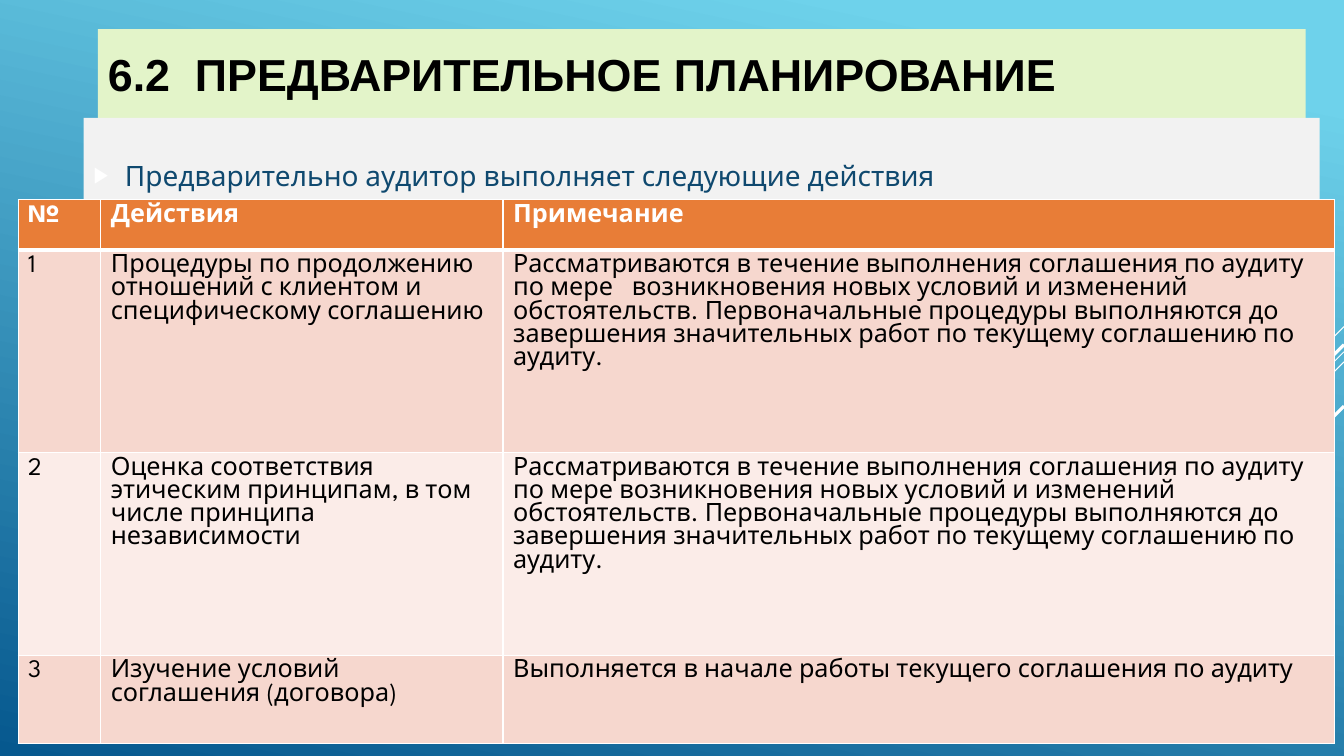
from lxml import etree
from pptx import Presentation
from pptx.dml.color import RGBColor
from pptx.enum.shapes import MSO_CONNECTOR as Connector, MSO_SHAPE as Shape
from pptx.enum.text import MSO_ANCHOR as Anchor, MSO_AUTO_SIZE as AutoSize, PP_ALIGN as Align
from pptx.oxml.ns import qn
from pptx.util import Inches, Pt

SKY = RGBColor(0x6E, 0xD2, 0xEB)
DEEP_BLUE = RGBColor(0x06, 0x58, 0x8E)
NAVY = RGBColor(0x0F, 0x49, 0x6F)
WHITE = RGBColor(0xFF, 0xFF, 0xFF)
BLACK = RGBColor(0x00, 0x00, 0x00)
PALE_GREEN = RGBColor(0xE3, 0xF4, 0xC9)
PALE_GREY = RGBColor(0xF2, 0xF2, 0xF2)
ORANGE = RGBColor(0xE8, 0x7D, 0x37)
BANDS = (RGBColor(0xF6, 0xD7, 0xCE), RGBColor(0xFB, 0xEC, 0xE8))

HEADING_FONT, TEXT_FONT = "Arial", "League Spartan"

# Right end x is the slide edge: start y, end x, end y, width in points
RAYS = [
    (3.24, 12.33, 4.24, 0.75),
    (3.49, 10.07, 6.75, 0.75),
    (3.59, 11.26, 5.67, 0.75),
    (3.42, 11.42, 5.33, 2.25),
    (4.03, 11.94, 5.42, 2.25),
]

ACTIONS = [
    ("№", "Действия", "Примечание"),
    ("1", "Процедуры по продолжению отношений с клиентом и специфическому соглашению",
     "Рассматриваются в течение выполнения соглашения по аудиту по мере   возникновения "
     "новых условий и изменений обстоятельств. Первоначальные процедуры выполняются до "
     "завершения значительных работ по текущему соглашению по аудиту."),
    ("2", "Оценка соответствия этическим принципам, в том числе принципа независимости",
     "Рассматриваются в течение выполнения соглашения по аудиту по мере возникновения "
     "новых условий и изменений обстоятельств. Первоначальные процедуры выполняются до "
     "завершения значительных работ по текущему соглашению по аудиту."),
    ("3", "Изучение условий соглашения (договора)",
     "Выполняется в начале работы текущего соглашения по аудиту"),
]


def write(frame, text, font=TEXT_FONT, size=18, color=BLACK, bold=False, bullet=None):
    """Put one formatted paragraph into a text frame."""
    frame.word_wrap = True
    para = frame.paragraphs[0]
    para.alignment = Align.LEFT
    para.line_spacing = 1.0
    if bullet:
        props = para._p.get_or_add_pPr()
        props.set("marL", str(Inches(0.31)))
        props.set("indent", str(Inches(-0.31)))
        tint = etree.SubElement(props, qn("a:buClr"))
        etree.SubElement(tint, qn("a:srgbClr"), val=str(WHITE))
        etree.SubElement(props, qn("a:buSzPct"), val="80000")
        etree.SubElement(props, qn("a:buFont"), typeface=HEADING_FONT)
        etree.SubElement(props, qn("a:buChar"), char=bullet)
    span = para.add_run()
    span.text = text
    span.font.name = font
    span.font.size = Pt(size)
    span.font.bold = bold
    span.font.color.rgb = color


class SlideBuilder:
    def __init__(self, deck):
        self.deck = deck
        self.page = deck.slides.add_slide(deck.slide_layouts[5])

    def background(self, start, end, angle):
        fill = self.page.background.fill
        fill.gradient()
        fill.gradient_angle = 360 - angle
        for stop, color, position in zip(fill.gradient_stops, (start, end), (0.1, 1)):
            stop.color.rgb = color
            stop.position = position

    def title(self, text, left, top, width, height):
        box = self.page.shapes.title
        box.left, box.top, box.width, box.height = map(Inches, (left, top, width, height))
        box.fill.solid()
        box.fill.fore_color.rgb = PALE_GREEN
        box.text_frame.auto_size = AutoSize.NONE
        box.text_frame.vertical_anchor = Anchor.MIDDLE
        write(box.text_frame, text, font=HEADING_FONT, size=32, bold=True)

    def ray(self, start_y, end_x, end_y, width):
        line = self.page.shapes.add_connector(
            Connector.STRAIGHT, self.deck.slide_width, Inches(start_y),
            Inches(end_x), Inches(end_y))
        line.line.color.rgb = WHITE
        line.line.width = Pt(width)
        etree.SubElement(line._element.spPr, qn("a:effectLst"))

    def panel(self, text, left, top, width, height):
        box = self.page.shapes.add_shape(
            Shape.RECTANGLE, *map(Inches, (left, top, width, height)))
        box.shadow.inherit = False
        box.fill.solid()
        box.fill.fore_color.rgb = PALE_GREY
        box.line.fill.background()
        box.text_frame.vertical_anchor = Anchor.TOP
        box.text_frame.margin_top = Inches(0.4)
        write(box.text_frame, text, size=20, color=NAVY, bullet="▶")

    def borders(self, cell, bottom):
        props = cell._tc.get_or_add_tcPr()
        for side, width in (("L", 1), ("R", 1), ("T", 1), ("B", bottom)):
            edge = etree.SubElement(props, qn(f"a:ln{side}"), w=str(Pt(width)))
            paint = etree.SubElement(edge, qn("a:solidFill"))
            etree.SubElement(paint, qn("a:srgbClr"), val=str(WHITE))

    def table(self, rows, left, top, widths, heights):
        table = self.page.shapes.add_table(
            len(rows), len(widths), Inches(left), Inches(top),
            Inches(sum(widths)), Inches(sum(heights))).table
        table.horz_banding = False
        for column, width in zip(table.columns, widths):
            column.width = Inches(width)
        for index, (row, height) in enumerate(zip(rows, heights)):
            table.rows[index].height = Inches(height)
            header = index == 0
            for cell, text in zip(table.rows[index].cells, row):
                self.borders(cell, bottom=3 if header else 1)
                cell.fill.solid()
                cell.fill.fore_color.rgb = ORANGE if header else BANDS[(index - 1) % 2]
                write(cell.text_frame, text, color=WHITE if header else BLACK, bold=header)


def main():
    deck = Presentation()
    deck.slide_width, deck.slide_height = Inches(13.33), Inches(7.5)
    slide = SlideBuilder(deck)

    # Backdrop
    slide.background(SKY, DEEP_BLUE, angle=102)
    for ray in RAYS:
        slide.ray(*ray)

    # Heading and lead-in
    slide.title("6.2  ПРЕДВАРИТЕЛЬНОЕ ПЛАНИРОВАНИЕ", 0.97, 0.29, 11.98, 0.88)
    slide.panel("Предварительно аудитор выполняет следующие действия",
                0.83, 1.17, 12.26, 3.44)

    # Table of actions
    slide.table(ACTIONS, 0.18, 1.98, widths=(0.82, 3.99, 8.25),
                heights=(0.5, 2.01, 2.01, 0.88))

    deck.save("out.pptx")


if __name__ == "__main__":
    main()
